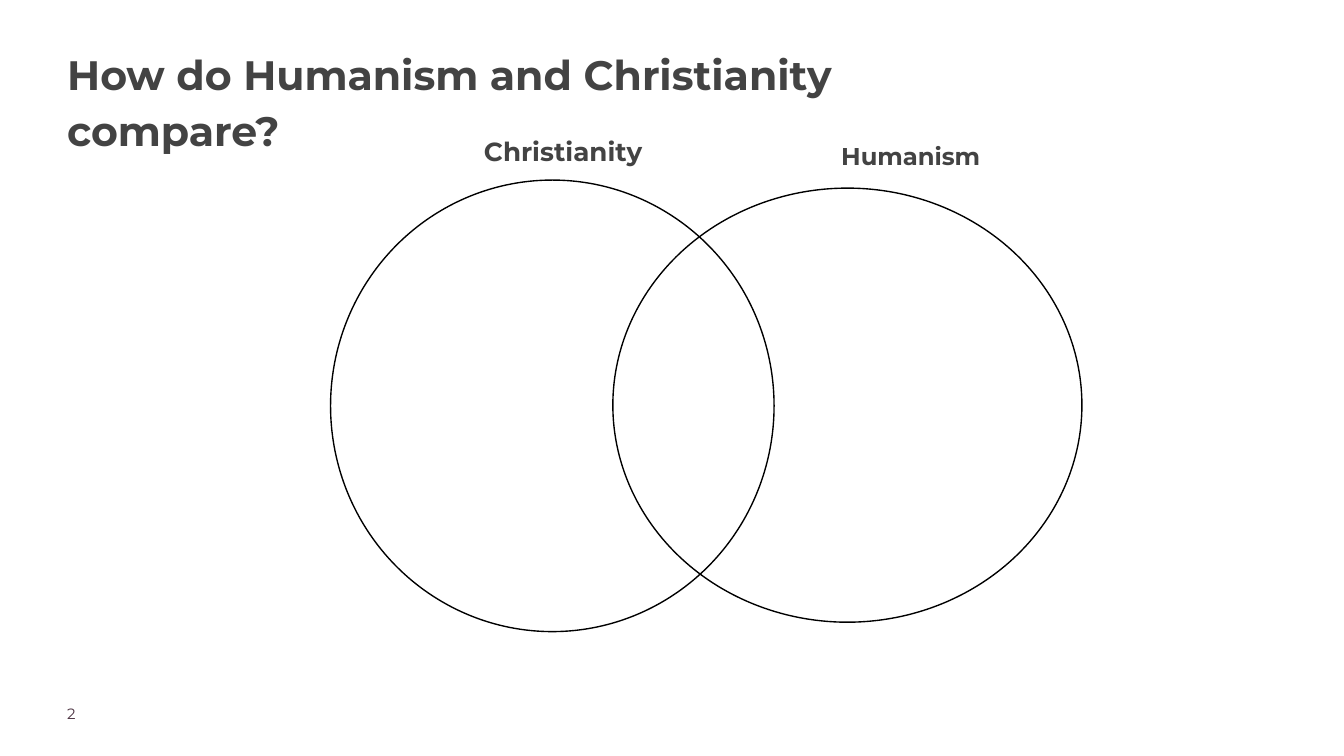
from pptx import Presentation
from pptx.dml.color import RGBColor
from pptx.enum import shapes, text
from pptx.util import Inches, Pt

FONT = "Montserrat"
COLORS = {"ink": "434343", "page": "4B3241", "line": "000000"}

TITLE = ("How do Humanism and Christianity compare?", (0.5, 0.31, 7.22, 0.89))
PAGE = ("2", (0.5, 5.24, 0.79, 0.2))
CIRCLES = [(2.46, 1.34, 3.3, 3.36), (4.56, 1.4, 3.49, 3.23)]
LABELS = [
    ("Christianity", (3.17, 0.96, 2.04, 0.32), 14),
    ("Humanism", (6.05, 1, 1.45, 0.25), 13),
]


def place(box):
    return [Inches(n) for n in box]


def write(words, box, shape=None, size=14, color="ink", bold=True,
          align=text.PP_ALIGN.LEFT, inset=0, spacing=1.0):
    if shape is None:
        shape = slide.shapes.add_textbox(*place(box))
    else:
        shape.left, shape.top, shape.width, shape.height = place(box)
    frame = shape.text_frame
    frame.word_wrap = True
    frame.auto_size = text.MSO_AUTO_SIZE.NONE
    frame.vertical_anchor = text.MSO_ANCHOR.TOP
    frame.margin_left = frame.margin_right = Inches(inset)
    frame.margin_top = frame.margin_bottom = Inches(inset)
    para = frame.paragraphs[0]
    para.alignment = align
    para.line_spacing = spacing
    run = para.add_run()
    run.text = words
    run.font.name = FONT
    run.font.size = Pt(size)
    run.font.bold = bold
    run.font.color.rgb = RGBColor.from_string(COLORS[color])


deck = Presentation()
deck.slide_width = Inches(10)
deck.slide_height = deck.slide_width * 9 // 16
slide = deck.slides.add_slide(deck.slide_layouts[5])

write(*TITLE, shape=slide.shapes.title, size=22, spacing=1.15)
write(*PAGE, size=8, color="page", bold=False)

for box in CIRCLES:
    circle = slide.shapes.add_shape(shapes.MSO_SHAPE.OVAL, *place(box))
    circle.shadow.inherit = False
    circle.fill.background()
    circle.line.color.rgb = RGBColor.from_string(COLORS["line"])
    circle.line.width = Pt(0.75)

for words, box, size in LABELS:
    write(words, box, size=size, align=text.PP_ALIGN.CENTER, inset=0.05)

deck.save("out.pptx")
